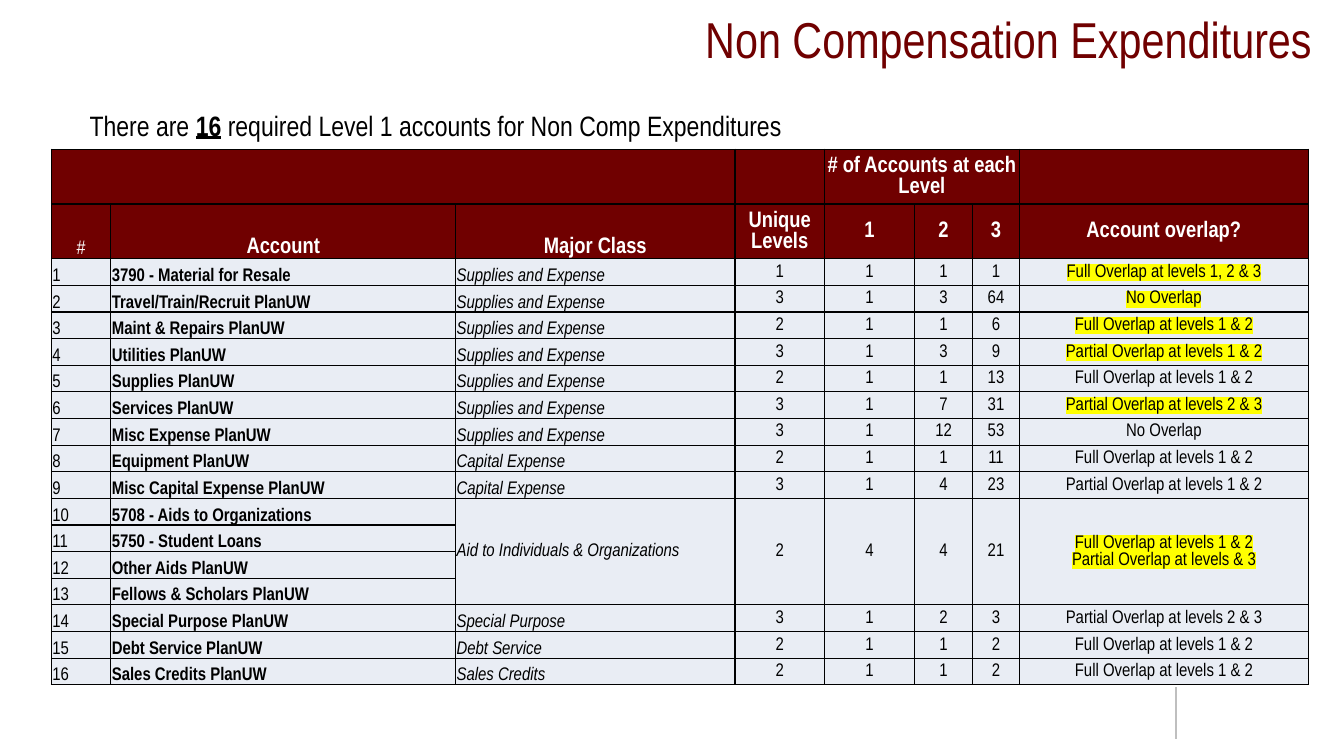
from dataclasses import dataclass
from typing import Optional

from lxml.etree import SubElement
from pptx import Presentation
from pptx.dml.color import RGBColor
from pptx.enum.shapes import MSO_CONNECTOR as Connector
from pptx.enum.text import MSO_ANCHOR as Anchor, PP_ALIGN as Align
from pptx.oxml import parse_xml
from pptx.oxml.ns import nsdecls, qn
from pptx.util import Inches, Pt

FONT = "Arial Narrow"
COLORS = {
    "maroon": "700000", "white": "FFFFFF", "black": "000000",
    "body": "E9EDF4", "highlight": "FFFF00", "rule": "BFBFBF",
}
COLUMN_WIDTHS = [0.59, 3.42, 2.77, 0.89, 0.89, 0.58, 0.46, 2.87]
TABLE_HEIGHT, HEADER_HEIGHT, HEADER_ROWS = 5.31, 0.54, 2
HEADINGS = ["#", "Account", "Major Class", "Unique Levels", "1", "2", "3", "Account overlap?"]


@dataclass
class Account:
    name: str
    major_class: str = ""
    counts: tuple = ()  # unique levels, then accounts at levels 1, 2 and 3
    overlap: str = ""
    marked: bool = False
    rows: int = 1  # rows shared by everything after the name


SUPPLIES, CAPITAL = "Supplies and Expense", "Capital Expense"
FULL, PARTIAL = "Full Overlap at levels 1 & 2", "Partial Overlap at levels 1 & 2"
PARTIAL_UPPER, NONE = "Partial Overlap at levels 2 & 3", "No Overlap"
ACCOUNTS = [
    Account("3790 - Material for Resale", SUPPLIES, (1, 1, 1, 1),
            "Full Overlap at levels 1, 2 & 3", True),
    Account("Travel/Train/Recruit PlanUW", SUPPLIES, (3, 1, 3, 64), NONE, True),
    Account("Maint & Repairs PlanUW", SUPPLIES, (2, 1, 1, 6), FULL, True),
    Account("Utilities PlanUW", SUPPLIES, (3, 1, 3, 9), PARTIAL, True),
    Account("Supplies PlanUW", SUPPLIES, (2, 1, 1, 13), FULL),
    Account("Services PlanUW", SUPPLIES, (3, 1, 7, 31), PARTIAL_UPPER, True),
    Account("Misc Expense PlanUW", SUPPLIES, (3, 1, 12, 53), NONE),
    Account("Equipment PlanUW", CAPITAL, (2, 1, 1, 11), FULL),
    Account("Misc Capital Expense PlanUW", CAPITAL, (3, 1, 4, 23), PARTIAL),
    Account("5708 - Aids to Organizations", "Aid to Individuals & Organizations",
            (2, 4, 4, 21), FULL + "\nPartial Overlap at levels & 3", True, rows=4),
    Account("5750 - Student Loans"),
    Account("Other Aids PlanUW"),
    Account("Fellows & Scholars PlanUW"),
    Account("Special Purpose PlanUW", "Special Purpose", (3, 1, 2, 3), PARTIAL_UPPER),
    Account("Debt Service PlanUW", "Debt Service", (2, 1, 1, 2), FULL),
    Account("Sales Credits PlanUW", "Sales Credits", (2, 1, 1, 2), FULL),
]


def color(name: str) -> RGBColor:
    return RGBColor.from_string(COLORS[name])


def add_text(paragraph, text: str, *, size: float, fill: str = "black",
             bold: bool = False, italic: bool = False, underline: bool = False,
             highlight: bool = False, align: Optional[Align] = None) -> None:
    """Add one formatted run to a paragraph."""
    if align is not None:
        paragraph.alignment = align
    run = paragraph.add_run()
    run.text = text
    font = run.font
    font.size, font.bold, font.italic, font.underline = Pt(size), bold, italic, underline
    font.color.rgb = color(fill)
    if highlight:
        mark = SubElement(font.color._xFill.getparent(), qn("a:highlight"))
        SubElement(mark, qn("a:srgbClr")).set("val", COLORS["highlight"])
    font.name = FONT


def add_box(slide, left: float, top: float, width: float, height: float):
    frame = slide.shapes.add_textbox(
        Inches(left), Inches(top), Inches(width), Inches(height)).text_frame
    frame.word_wrap = True
    return frame


def style_cell(cell, fill: str) -> None:
    """Set fill, margins, black borders and a small empty-text size."""
    cell.fill.solid()
    cell.fill.fore_color.rgb = color(fill)
    cell.margin_left = cell.margin_right = cell.margin_top = Inches(0.01)
    cell.margin_bottom = 0
    properties = cell._tc.get_or_add_tcPr()
    for index, side in enumerate(("lnL", "lnR", "lnT", "lnB")):
        properties.insert(index, parse_xml(
            f'<a:{side} {nsdecls("a")} w="12700"><a:solidFill>'
            f'<a:srgbClr val="{COLORS["black"]}"/></a:solidFill></a:{side}>'))
    ending = SubElement(cell.text_frame.paragraphs[0]._p, qn("a:endParaRPr"))
    ending.set("sz", "1300")


def fill_cell(cell, text: str, anchor: Anchor = Anchor.MIDDLE, **text_format) -> None:
    cell.vertical_anchor = anchor
    frame = cell.text_frame
    for index, line in enumerate(text.split("\n")):
        paragraph = frame.add_paragraph() if index else frame.paragraphs[0]
        add_text(paragraph, line, **text_format)


def add_accounts_table(slide) -> None:
    row_count = HEADER_ROWS + len(ACCOUNTS)
    table = slide.shapes.add_table(
        row_count, len(COLUMN_WIDTHS), Inches(0.51), Inches(1.48),
        Inches(sum(COLUMN_WIDTHS)), Inches(TABLE_HEIGHT)).table
    table.first_row = table.horz_banding = False
    for column, width in zip(table.columns, COLUMN_WIDTHS):
        column.width = Inches(width)
    body_height = (TABLE_HEIGHT - HEADER_ROWS * HEADER_HEIGHT) / len(ACCOUNTS)
    for index, row in enumerate(table.rows):
        is_header = index < HEADER_ROWS
        row.height = Inches(HEADER_HEIGHT if is_header else body_height)
        for cell in row.cells:
            style_cell(cell, "maroon" if is_header else "body")

    # Header rows
    table.cell(0, 0).merge(table.cell(0, 2))
    table.cell(0, 4).merge(table.cell(0, 6))
    header = dict(fill="white", align=Align.CENTER)
    fill_cell(table.cell(0, 4), "# of Accounts at each Level", size=16, bold=True, **header)
    for column, heading in enumerate(HEADINGS):
        fill_cell(table.cell(1, column), heading,
                  Anchor.BOTTOM if column < 3 else Anchor.MIDDLE,
                  size=16 if column else 14, bold=column > 0, **header)

    # Account rows
    for number, account in enumerate(ACCOUNTS, start=1):
        row = HEADER_ROWS + number - 1
        fill_cell(table.cell(row, 0), str(number), Anchor.BOTTOM, size=13)
        fill_cell(table.cell(row, 1), account.name, Anchor.BOTTOM, size=13, bold=True)
        if not account.major_class:
            continue
        if account.rows > 1:
            for column in range(2, len(COLUMN_WIDTHS)):
                table.cell(row, column).merge(table.cell(row + account.rows - 1, column))
        fill_cell(table.cell(row, 2), account.major_class,
                  Anchor.MIDDLE if account.rows > 1 else Anchor.BOTTOM,
                  size=13, italic=True)
        for column, count in enumerate(account.counts, start=3):
            fill_cell(table.cell(row, column), str(count), size=13, align=Align.CENTER)
        fill_cell(table.cell(row, 7), account.overlap, size=13,
                  align=Align.CENTER, highlight=account.marked)


def main() -> None:
    presentation = Presentation()
    presentation.slide_width, presentation.slide_height = Inches(13.33), Inches(7.5)
    slide = presentation.slides.add_slide(presentation.slide_layouts[6])

    # Footer rule
    rule = slide.shapes.add_connector(
        Connector.STRAIGHT, Inches(11.66), Inches(6.82), Inches(11.66), Inches(7.33))
    rule.line.color.rgb = color("rule")
    rule.line.width = Pt(1.5)
    SubElement(rule._element.spPr, qn("a:effectLst"))

    # Title
    title = add_box(slide, 3.11, 0.08, 10, 0.6)
    title.vertical_anchor = Anchor.MIDDLE
    add_text(title.paragraphs[0], "Non Compensation Expenditures",
             size=36, fill="maroon", align=Align.RIGHT)

    # Introduction
    introduction = add_box(slide, 0.79, 1, 7.78, 0.45).paragraphs[0]
    introduction.line_spacing, introduction.space_after = 1.07, Pt(8)
    add_text(introduction, "There are ", size=20)
    add_text(introduction, "16", size=20, bold=True, underline=True)
    add_text(introduction, " required Level 1 accounts for Non Comp Expenditures", size=20)

    add_accounts_table(slide)
    presentation.save("out.pptx")


if __name__ == "__main__":
    main()
